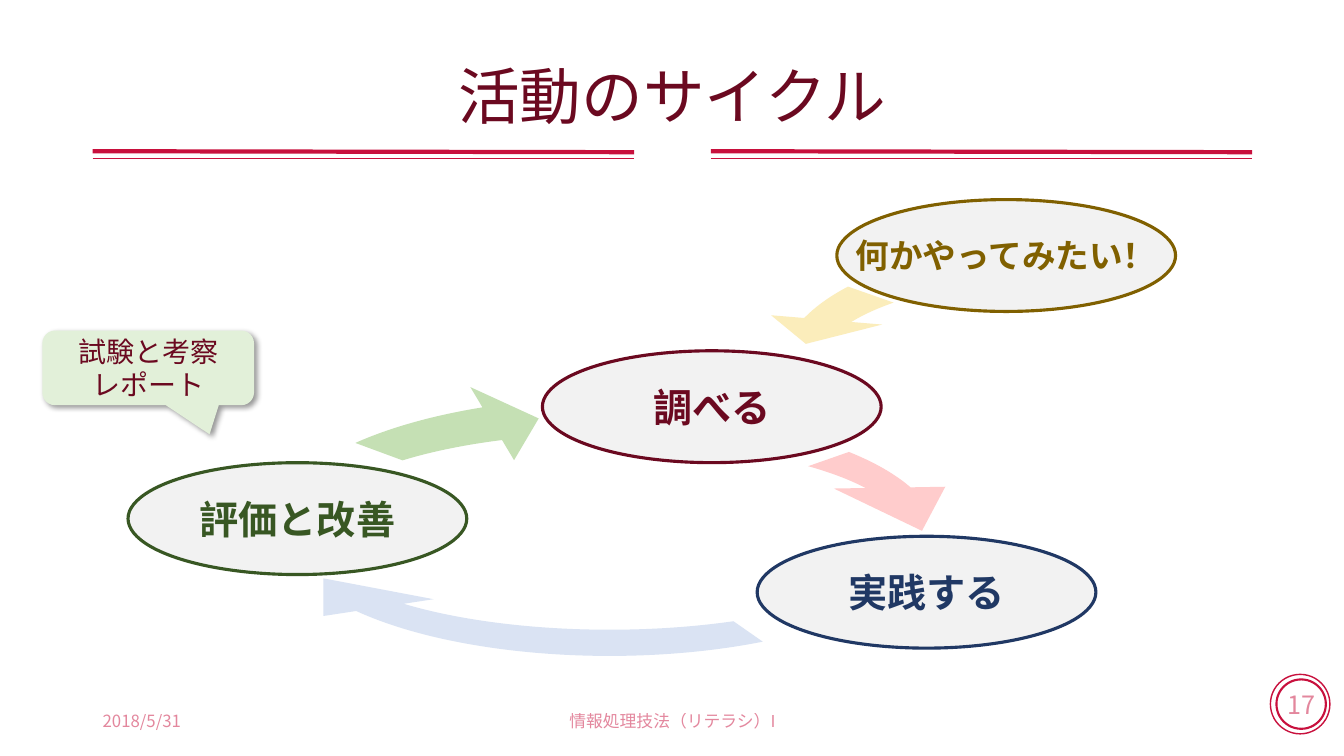
from dataclasses import dataclass

from lxml import etree
from pptx import Presentation
from pptx.dml.color import RGBColor
from pptx.enum.shapes import MSO_CONNECTOR, MSO_SHAPE
from pptx.enum.text import MSO_ANCHOR, MSO_AUTO_SIZE, PP_ALIGN
from pptx.oxml.ns import qn
from pptx.util import Inches, Pt

LEFT, CENTER = PP_ALIGN.LEFT, PP_ALIGN.CENTER
MIDDLE = MSO_ANCHOR.MIDDLE
NO_FIT = MSO_AUTO_SIZE.NONE
STRAIGHT = MSO_CONNECTOR.STRAIGHT
OVAL = MSO_SHAPE.OVAL
ARROW = MSO_SHAPE.CIRCULAR_ARROW
CALLOUT = MSO_SHAPE.ROUNDED_RECTANGULAR_CALLOUT
SLIDE_W, SLIDE_H = Inches(13.33), Inches(7.5)
COLS, ROWS = 133.3, 75


@dataclass(frozen=True)
class Theme:
    """Fonts, type sizes and colours of the slide."""
    font: str = "Noto Sans CJK JP"
    title: int = 44
    step: int = 28
    idea: int = 24
    note: int = 20
    number: int = 18
    small: int = 12
    accent: str = "C8103D"
    wine: str = "6B0920"
    navy: str = "203864"
    green: str = "385723"
    gold: str = "806000"
    node: str = "F2F2F2"
    pale_green: str = "C5E0B4"
    pale_red: str = "FFCCCC"
    pale_blue: str = "DAE3F3"
    pale_gold: str = "FBEDBB"
    callout: str = "E2F0D9"


T = Theme()


def place(box, x, y, w, h):
    """Turn grid cells relative to a box into slide lengths."""
    cols, rows = (box[0] + x, w), (box[1] + y, h)
    left, width = (round(c * SLIDE_W / COLS) for c in cols)
    top, height = (round(r * SLIDE_H / ROWS) for r in rows)
    return left, top, width, height


def write(sp, text, size, color, bold=False, align=CENTER, wrap=True, alpha=None, spacing=None):
    """Write the lines of a text into a shape with one format."""
    tf = sp.text_frame
    tf.auto_size, tf.word_wrap, tf.vertical_anchor = NO_FIT, wrap, MIDDLE
    for i, line in enumerate(text.split("\n")):
        p = tf.add_paragraph() if i else tf.paragraphs[0]
        p.alignment, p.line_spacing = align, spacing
        r = p.add_run()
        r.text = line
        r.font.size, r.font.bold, r.font.name = Pt(size), bold, T.font
        r.font.color.rgb = RGBColor.from_string(color)
        rpr = r.font._element
        etree.SubElement(rpr, qn("a:ea"), typeface=T.font)
        if alpha:
            etree.SubElement(rpr.find(".//" + qn("a:srgbClr")), qn("a:alpha"), val=str(alpha * 1000))


def add_shape(s, kind, area, fill=None, line=None, width=1, adjust=()):
    """Add a preset shape with its fill, outline and adjustments."""
    sp = s.shapes.add_shape(kind, *area)
    sp.shadow.inherit = False
    if fill:
        sp.fill.solid()
        sp.fill.fore_color.rgb = RGBColor.from_string(fill)
    else:
        sp.fill.background()
    if line:
        sp.line.color.rgb = RGBColor.from_string(line)
        sp.line.width = Pt(width)
    else:
        sp.line.fill.background()
    for i, value in enumerate(adjust):
        sp.adjustments[i] = value
    return sp


def add_rule(s, area, width):
    """Add an accent line across an area."""
    x, y, w, h = area
    line = s.shapes.add_connector(STRAIGHT, x, y, x + w, y + h)
    line.line.color.rgb = RGBColor.from_string(T.accent)
    line.line.width = Pt(width)
    etree.SubElement(line._element.spPr, qn("a:effectLst"))


def add_shadow(sp):
    """Give a shape a soft shadow to the lower right."""
    effects = sp._element.spPr.find(qn("a:effectLst"))
    shadow = etree.SubElement(effects, qn("a:outerShdw"), blurRad=str(Pt(4)), dist=str(Pt(3)),
                              dir="2700000", algn="tl", rotWithShape="0")
    color = etree.SubElement(shadow, qn("a:srgbClr"), val="000000")
    etree.SubElement(color, qn("a:alpha"), val="40000")


def header(s, box):
    """Place the title above two pairs of rules."""
    for x in (0, 61.3):
        add_rule(s, place(box, x, 11, 53.7, 0.1), 3)
        add_rule(s, place(box, x, 11.7, 53.7, 0), 1)
    title = s.shapes.title
    title.left, title.top, title.width, title.height = place(box, 0, 0, 115, 11.7)
    write(title, "活動のサイクル", T.title, T.wine, spacing=0.9)


def footer(s, box):
    """Place the date, the course and the ringed page number."""
    add_shape(s, OVAL, place(box, 116.8, 0, 5.9, 5.9), line=T.accent)
    ring = add_shape(s, OVAL, place(box, 117.4, 0.5, 4.9, 4.9), line=T.accent, width=1.5)
    write(ring, "17", T.number, T.accent, wrap=False, alpha=50)
    for x, w, text, align in ((0, 30, "2018/5/31", LEFT),
                              (35, 45, "情報処理技法（リテラシ）I", CENTER)):
        tb = s.shapes.add_textbox(*place(box, x, 2.6, w, 4))
        write(tb, text, T.small, T.accent, align=align, alpha=50)


def cycle(s, box):
    """Place the steps, the arrows between them and the callout."""
    for x, y, text, size, color in (
            (49.6, 15, "調べる", T.step, T.wine),
            (70.9, 33.4, "実践する", T.step, T.navy),
            (8.5, 26.1, "評価と改善", T.step, T.green),
            (78.8, 0, "何かやってみたい！", T.idea, T.gold)):
        sp = add_shape(s, OVAL, place(box, x, y, 33.6, 11.1), T.node, color, 2.25)
        write(sp, text, size, color, bold=True, wrap=False)
    for x, y, w, fill, flip, adjust in (
            (19.7, 17.2, 73.1, T.pale_green, False, (0.11, 9.09, 134.38, 120.16, 0.13)),
            (19.7, 17.1, 73.1, T.pale_red, False, (0.09, 5.31, 210.15, 204.42, 0.17)),
            (19.7, 17, 73.1, T.pale_blue, False, (0.08, 5.31, 97.49, 20.95, 0.17)),
            (69.6, 0.3, 65.8, T.pale_gold, True, (0.11, 3.48, 209.66, 204.42, 0.17))):
        sp = add_shape(s, ARROW, place(box, x, y, w, 32.5), fill, adjust=adjust)
        if flip:
            sp._element.spPr.find(qn("a:xfrm")).set("flipH", "1")
    sp = add_shape(s, CALLOUT, place(box, 0, 13, 21, 7.4), T.callout, adjust=(0.29, 0.89, 0.17))
    add_shadow(sp)
    write(sp, "試験と考察\nレポート", T.note, T.wine)


def main():
    """Build the slide and save it."""
    prs = Presentation()
    prs.slide_width, prs.slide_height = SLIDE_W, SLIDE_H
    s = prs.slides.add_slide(prs.slide_layouts[5])
    header(s, (9.2, 4))
    footer(s, (9.2, 66.9))
    cycle(s, (4.2, 19.8))
    prs.save("out.pptx")


if __name__ == "__main__":
    main()
